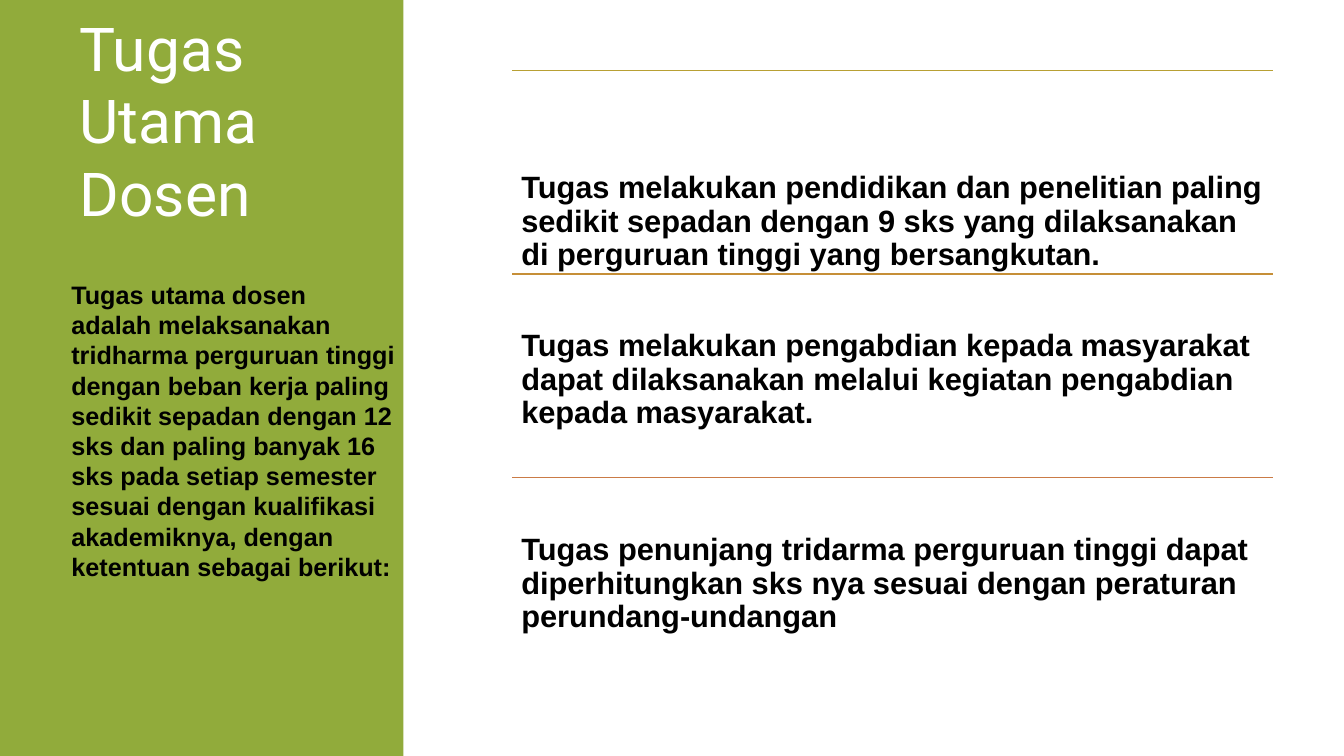
from lxml import etree
from pptx import Presentation
from pptx.dml.color import RGBColor
from pptx.enum import shapes, text
from pptx.oxml import ns
from pptx.util import Inches, Pt

PANEL_EDGE = [
    (4.46, 0), (4.46, 0.63), (4.46, 1.02), (4.46, 1.41), (4.46, 1.74), (4.46, 2.33),
    (4.47, 2.75), (4.45, 3.22), (4.45, 3.83), (4.47, 4.46), (4.46, 4.86), (4.45, 5.28),
    (4.45, 5.49), (4.47, 6), (4.46, 6.39), (4.46, 6.85), (4.47, 7.33), (4.46, 7.5),
]
# Rule colour, gap between rule and wording, wording
DUTIES = [
    ("B8A034", 1.0, "Tugas melakukan pendidikan dan penelitian paling sedikit sepadan "
                    "dengan 9 sks yang dilaksanakan di perguruan tinggi yang bersangkutan."),
    ("C68F38", 0.55, "Tugas melakukan pengabdian kepada masyarakat dapat dilaksanakan "
                     "melalui kegiatan pengabdian kepada masyarakat."),
    ("CA7B46", 0.55, "Tugas penunjang tridarma perguruan tinggi dapat diperhitungkan "
                     "sks nya sesuai dengan peraturan perundang-undangan"),
]
INTRO = ("Tugas utama dosen\vadalah melaksanakan tridharma perguruan tinggi dengan "
         "beban kerja paling sedikit sepadan dengan 12 sks dan paling banyak 16 sks "
         "pada setiap semester sesuai dengan kualifikasi akademiknya, dengan ketentuan "
         "sebagai berikut:")


def colour(hex_code):
    return RGBColor.from_string(hex_code)


def place(shape, left, top, width, height):
    shape.left, shape.top = Inches(left), Inches(top)
    shape.width, shape.height = Inches(width), Inches(height)


def write(shape, wording, size, leading, font="Arial", hex_code="000000", bold=True):
    """Fill a shape with one left-aligned paragraph; leading is in points."""
    frame = shape.text_frame
    frame.word_wrap = True
    frame.auto_size = text.MSO_AUTO_SIZE.NONE
    frame.text = wording
    paragraph = frame.paragraphs[0]
    paragraph.alignment = text.PP_ALIGN.LEFT
    paragraph.line_spacing = Pt(leading)
    for run in paragraph.runs:
        run.font.name, run.font.size, run.font.bold = font, Pt(size), bold
        run.font.color.rgb = colour(hex_code)


def add_panel(slide):
    """Green side panel with a wavy right edge, behind everything else."""
    outline = slide.shapes.build_freeform(0, 0, scale=Inches(1))
    outline.add_line_segments(PANEL_EDGE + [(0, 7.5)], close=True)
    panel = outline.convert_to_shape()
    panel.shadow.inherit = False
    panel.fill.solid()
    panel.fill.fore_color.rgb = colour("91AB3B")
    panel.line.fill.background()
    panel.element.getparent().insert(2, panel.element)


def add_heading(slide, left, top, width, height):
    heading = slide.shapes.title
    place(heading, left, top, width, height)
    write(heading, "Tugas Utama Dosen", 43.2, 51.8, "Roboto", "FFFFFF", False)
    heading.text_frame.vertical_anchor = text.MSO_ANCHOR.MIDDLE


def add_intro(slide, left, top, width, height):
    intro = slide.shapes.add_textbox(*map(Inches, (left, top, width, height)))
    write(intro, INTRO, 18, 21.6)


def add_duties(slide, left, top, width, height):
    """Stack the duties in equal rows, each under its own rule."""
    row_height = height / len(DUTIES)
    for row, (rule_colour, gap, wording) in enumerate(DUTIES):
        row_top = top + row * row_height
        rule = slide.shapes.add_connector(
            shapes.MSO_CONNECTOR.STRAIGHT, Inches(left), Inches(row_top),
            Inches(left + width), Inches(row_top))
        rule.line.color.rgb = colour(rule_colour)
        rule.line.width = Pt(1)
        etree.SubElement(rule.element.spPr, ns.qn("a:effectLst"))

        duty = slide.shapes.add_textbox(*map(Inches, (left, row_top, width, row_height)))
        write(duty, wording, 22, 23.9)
        frame = duty.text_frame
        frame.margin_left = frame.margin_right = Inches(0.09)
        frame.margin_top, frame.margin_bottom = Inches(gap), 0


def main():
    deck = Presentation()
    deck.slide_width, deck.slide_height = Inches(13.33), Inches(7.5)
    slide = deck.slides.add_slide(deck.slide_layouts[5])
    add_panel(slide)
    add_heading(slide, 0.69, 0.03, 3.39, 2.31)
    add_duties(slide, 5.08, 0.7, 7.55, 6.06)
    add_intro(slide, 0.61, 2.72, 3.43, 3.43)
    deck.save("out.pptx")


if __name__ == "__main__":
    main()
